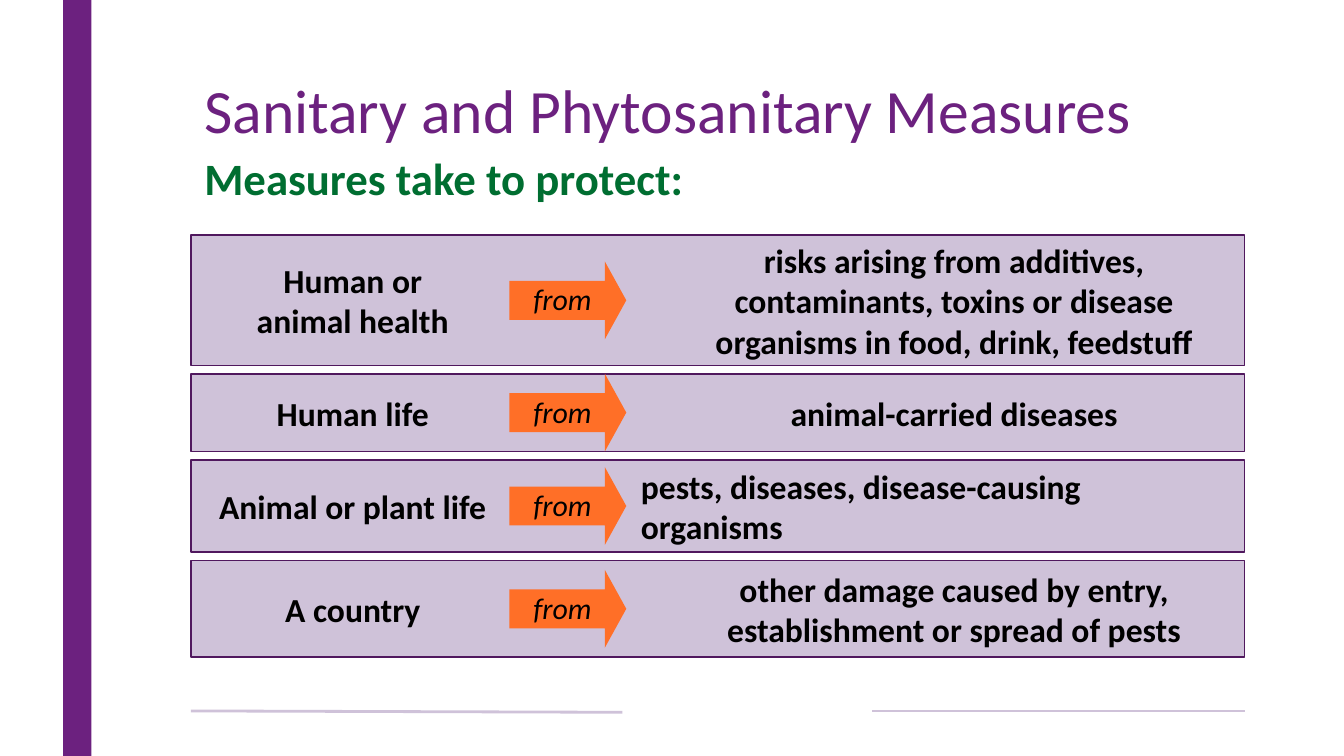
from lxml.etree import SubElement
from pptx import Presentation
from pptx.dml.color import RGBColor
from pptx.enum.shapes import MSO_CONNECTOR, MSO_SHAPE
from pptx.enum.text import MSO_ANCHOR as ANCHOR, PP_ALIGN as ALIGN
from pptx.oxml.ns import qn
from pptx.util import Pt

EMU_PER_PX = 9144  # 100 px to the inch
FONT = "Calibri"
PURPLE, DARK_PURPLE, LILAC = "6C217F", "50185E", "CFC2D9"
GREEN, ORANGE, BLACK = "006E31", "FF6F27", "000000"
ROW_GAP = 6

# height, what is protected, what it is protected from, alignment of the risk
ROWS = [
    (97, "Human or\nanimal health",
     ["risks arising from additives,",
      "contaminants, toxins or disease organisms in food, drink, feedstuff"],
     ALIGN.CENTER),
    (58, "Human life", ["animal-carried diseases"], ALIGN.CENTER),
    (69, "Animal or plant life",
     ["pests, diseases, disease-causing organisms"], ALIGN.LEFT),
    (72, "A country",
     ["other damage caused by entry,", "establishment or spread of pests"],
     ALIGN.CENTER),
]


def px(*lengths):
    return [round(length * EMU_PER_PX) for length in lengths]


def color(hex_string):
    return RGBColor.from_string(hex_string)


def write(shape, lines, size=18, fill=BLACK, bold=False, italic=False,
          align=ALIGN.CENTER, anchor=ANCHOR.MIDDLE, wrap=True,
          insets=(10, 0, 10, 0), spacing=None, plain=False):
    """Fill a shape with one paragraph per line; plain drops list bullets."""
    frame = shape.text_frame
    frame.word_wrap = wrap
    frame.vertical_anchor = anchor
    (frame.margin_left, frame.margin_top,
     frame.margin_right, frame.margin_bottom) = px(*insets)
    for index, line in enumerate(lines):
        paragraph = frame.add_paragraph() if index else frame.paragraphs[0]
        paragraph.text = line
        paragraph.alignment = align
        paragraph.space_before = Pt(0)
        if spacing:
            paragraph.line_spacing = spacing
        if plain:
            properties = paragraph._p.get_or_add_pPr()
            properties.set("marL", "0")
            properties.set("indent", "0")
            SubElement(properties, qn("a:buNone"))
        for run in paragraph.runs:
            font = run.font
            font.name, font.size = FONT, Pt(size)
            font.bold, font.italic = bold, italic
            font.color.rgb = color(fill)


def add_block(shapes, kind, box, fill, line=None):
    shape = shapes.add_shape(kind, *px(*box))
    shape.shadow.inherit = False
    shape.fill.solid()
    shape.fill.fore_color.rgb = color(fill)
    if line:
        shape.line.color.rgb = color(line)
        shape.line.width = Pt(1)
    else:
        shape.line.fill.background()
    return shape


def add_rule(shapes, start, end):
    rule = shapes.add_connector(MSO_CONNECTOR.STRAIGHT, *px(*start, *end))
    rule.line.color.rgb = color(LILAC)
    rule.line.width = Pt(1.5)
    SubElement(rule._element.spPr, qn("a:effectLst"))


def add_frame(shapes, height):
    """Side bar and the two footer rules."""
    add_block(shapes, MSO_SHAPE.RECTANGLE, (47, 0, 21, height), PURPLE)
    add_rule(shapes, (463, 530), (142, 529))
    add_rule(shapes, (649, 529), (926, 529))


def place(shape, box):
    shape.left, shape.top, shape.width, shape.height = px(*box)


def add_headings(slide):
    title, body = slide.placeholders[0], slide.placeholders[1]
    place(title, (142, 30, 784, 109))
    write(title, ["Sanitary and Phytosanitary Measures"], size=33, fill=PURPLE,
          align=ALIGN.LEFT, insets=(10, 5, 10, 5), spacing=0.9)
    place(body, (142, 110, 384, 48))
    write(body, ["Measures take to protect:"], size=24, fill=GREEN, bold=True,
          align=ALIGN.LEFT, anchor=ANCHOR.BOTTOM, insets=(10, 5, 10, 5),
          spacing=0.9, plain=True)


def add_row(slide, box, subject, risk, risk_align):
    left, top, width, height = box
    shapes = slide.shapes.add_group_shape().shapes
    add_block(shapes, MSO_SHAPE.RECTANGLE, box, LILAC, DARK_PURPLE)

    subject_box = shapes.add_textbox(*px(left + 2, top, 237, height))
    write(subject_box, [subject], bold=True)

    risk_left = left + (353 if risk_align == ALIGN.CENTER else 325)
    risk_box = shapes.add_textbox(
        *px(risk_left, top, left + width - 1 - risk_left, height))
    write(risk_box, risk, bold=True, align=risk_align)

    arrow = add_block(shapes, MSO_SHAPE.RIGHT_ARROW,
                      (left + 237, top + (height - 58) / 2, 87, 58), ORANGE)
    arrow.adjustments[0] = 0.5
    arrow.adjustments[1] = 0.275
    write(arrow, ["from"], size=16, italic=True, wrap=False,
          insets=(10, 4, 10, 6))


def add_rows(slide, left, top, width):
    for height, subject, risk, align in ROWS:
        add_row(slide, (left, top, width, height), subject, risk, align)
        top += height + ROW_GAP


def main():
    presentation = Presentation()
    presentation.slide_width, presentation.slide_height = px(1000, 562.5)
    slide = presentation.slides.add_slide(presentation.slide_layouts[1])
    add_frame(slide.shapes, 562.5)
    add_headings(slide)
    add_rows(slide, 142, 175, 784)
    presentation.save("out.pptx")


if __name__ == "__main__":
    main()
